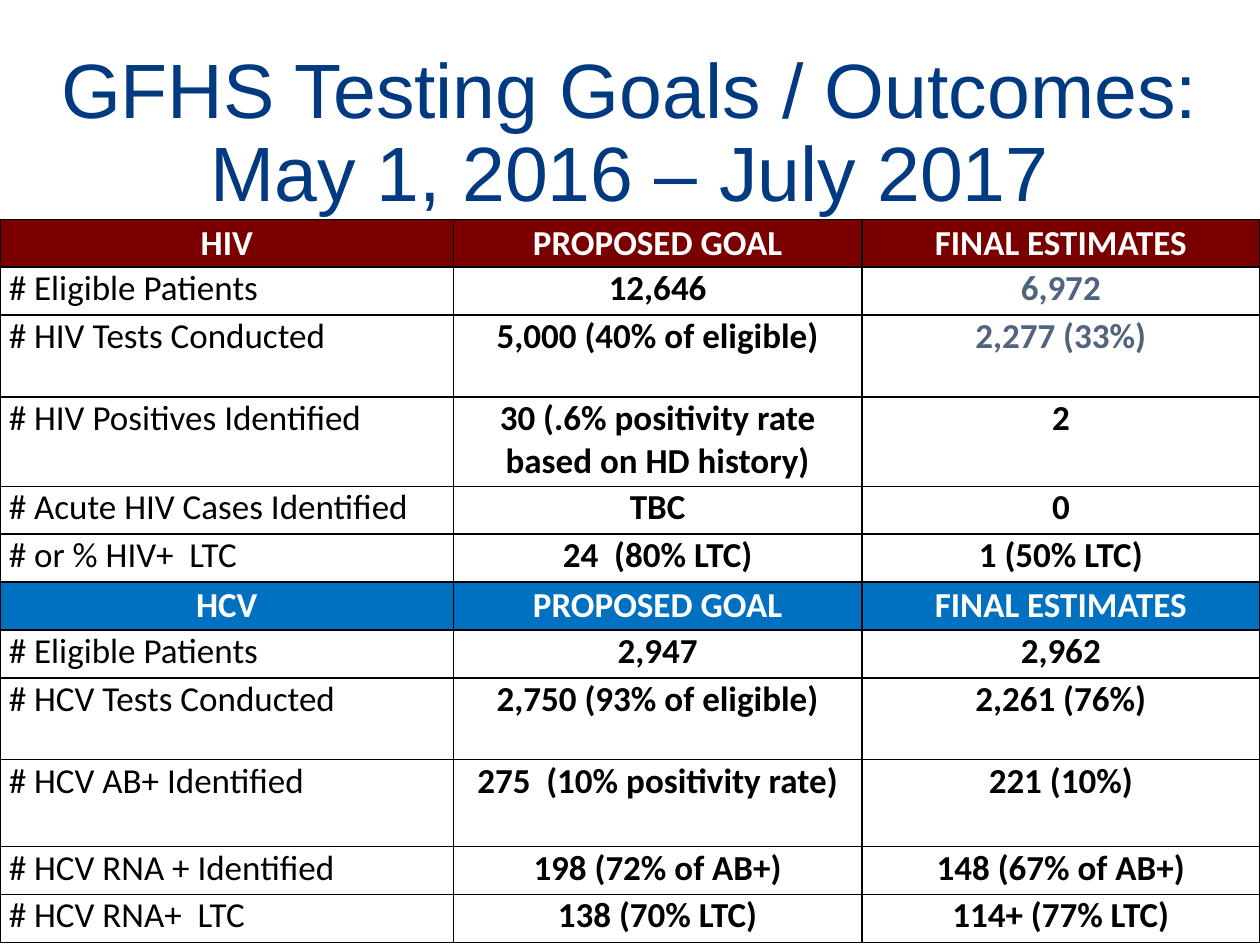
from lxml import etree
from pptx import Presentation
from pptx.dml.color import RGBColor
from pptx.enum.text import MSO_ANCHOR, MSO_AUTO_SIZE, PP_ALIGN
from pptx.oxml.ns import qn
from pptx.util import Inches, Pt

LEFT, CENTER = PP_ALIGN.LEFT, PP_ALIGN.CENTER
TOP, MIDDLE = MSO_ANCHOR.TOP, MSO_ANCHOR.MIDDLE
NO_FIT = MSO_AUTO_SIZE.NONE

NAVY = RGBColor(0x01, 0x3A, 0x81)
MAROON = RGBColor(0x7A, 0x00, 0x00)
BLUE = RGBColor(0x00, 0x70, 0xC0)
SLATE = RGBColor(0x51, 0x64, 0x7E)
BLACK = RGBColor(0, 0, 0)
WHITE = RGBColor(255, 255, 255)

TITLE_ONLY = 5
TITLE = "GFHS Testing Goals / Outcomes:\nMay 1, 2016 – July 2017"
COLUMN_WIDTHS = (3.6, 3.24, 3.16)
ROW_HEIGHT = 0.38
TALL_ROWS = {2: 0.65, 3: 0.71, 8: 0.65, 9: 0.69}
HEADER_FILLS = {"HIV": MAROON, "HCV": BLUE}
SLATE_CELLS = {(1, 2), (2, 2)}
ROWS = (
    ("HIV", "PROPOSED GOAL", "FINAL ESTIMATES"),
    ("# Eligible Patients", "12,646", "6,972"),
    ("# HIV Tests Conducted", "5,000 (40% of eligible)", "2,277 (33%)"),
    ("# HIV Positives Identified", "30 (.6% positivity rate based on HD history)", "2"),
    ("# Acute HIV Cases Identified", "TBC", "0"),
    ("# or % HIV+  LTC", "24  (80% LTC)", "1 (50% LTC)"),
    ("HCV", "PROPOSED GOAL", "FINAL ESTIMATES"),
    ("# Eligible Patients", "2,947", "2,962"),
    ("# HCV Tests Conducted", "2,750 (93% of eligible)", "2,261 (76%)"),
    ("# HCV AB+ Identified", "275  (10% positivity rate)", "221 (10%)"),
    ("# HCV RNA + Identified", "198 (72% of AB+)", "148 (67% of AB+)"),
    ("# HCV RNA+  LTC", "138 (70% LTC)", "114+ (77% LTC)"),
)


def format_paragraph(para, font_name, size, color, bold, alignment):
    para.alignment = alignment
    para.font.name = font_name
    para.font.size = Pt(size)
    para.font.color.rgb = color
    para.font.bold = bold


def place_title(title, left, top, width, height):
    title.left, title.top, title.width, title.height = left, top, width, height
    frame = title.text_frame
    frame.word_wrap = True
    frame.auto_size = NO_FIT
    frame.vertical_anchor = MIDDLE
    para = frame.paragraphs[0]
    para.text = TITLE
    para.line_spacing = 0.9
    format_paragraph(para, "Arial", 44, NAVY, False, CENTER)


def add_borders(cell):
    properties = cell._tc.get_or_add_tcPr()
    for index, side in enumerate(("a:lnL", "a:lnR", "a:lnT", "a:lnB")):
        line = etree.Element(qn(side), w=str(Pt(1)))
        fill = etree.SubElement(line, qn("a:solidFill"))
        etree.SubElement(fill, qn("a:srgbClr"), val=str(BLACK))
        properties.insert(index, line)


def fill_cell(cell, text, fill, color, bold, alignment, anchor):
    cell.margin_left = cell.margin_right = Inches(0.07)
    cell.margin_top = cell.margin_bottom = 0
    cell.vertical_anchor = anchor
    cell.fill.solid()
    cell.fill.fore_color.rgb = fill
    para = cell.text_frame.paragraphs[0]
    para.text = text
    format_paragraph(para, "Calibri", 20, color, bold, alignment)
    add_borders(cell)


def add_results_table(slide, left, top, width, height):
    table = slide.shapes.add_table(
        len(ROWS), len(COLUMN_WIDTHS), left, top, width, height
    ).table
    for column, share in zip(table.columns, COLUMN_WIDTHS):
        column.width = int(width * share / sum(COLUMN_WIDTHS))
    for row_index, texts in enumerate(ROWS):
        table.rows[row_index].height = Inches(TALL_ROWS.get(row_index, ROW_HEIGHT))
        header_fill = HEADER_FILLS.get(texts[0])
        for column_index, text in enumerate(texts):
            cell = table.cell(row_index, column_index)
            if header_fill:
                fill_cell(cell, text, header_fill, WHITE, True, CENTER, MIDDLE)
            else:
                is_value = column_index > 0
                color = SLATE if (row_index, column_index) in SLATE_CELLS else BLACK
                alignment = CENTER if is_value else LEFT
                fill_cell(cell, text, WHITE, color, is_value, alignment, TOP)


def main():
    deck = Presentation()
    deck.slide_width, deck.slide_height = Inches(10), Inches(7.5)
    slide = deck.slides.add_slide(deck.slide_layouts[TITLE_ONLY])
    table_top = Inches(1.74)
    place_title(slide.shapes.title, 0, Inches(0.35), deck.slide_width, Inches(1.45))
    add_results_table(
        slide, 0, table_top, deck.slide_width, deck.slide_height - table_top
    )
    deck.save("out.pptx")


if __name__ == "__main__":
    main()
